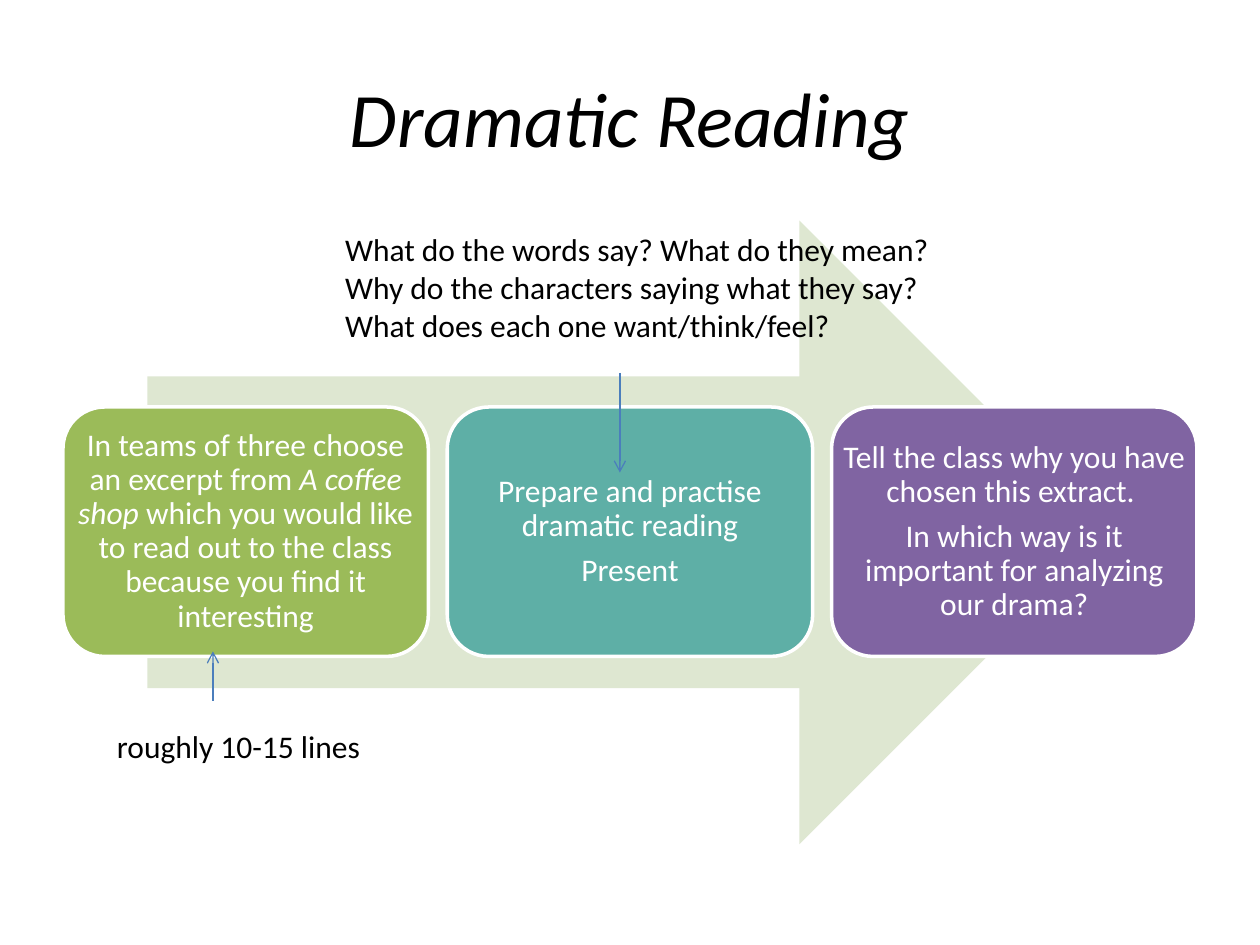
from dataclasses import dataclass

from lxml import etree
from pptx import Presentation
from pptx import util as u
from pptx.dml.color import RGBColor
from pptx.enum import shapes as sh
from pptx.enum import text as tx
from pptx.oxml.ns import qn

HUES = {
    "ink": "000000",
    "white": "FFFFFF",
    "arrow": "DEE7D1",
    "green": "9BBB59",
    "teal": "5EAFA6",
    "purple": "8064A2",
    "line": "4B7EBC",
}


@dataclass(frozen=True)
class Box:
    left: float
    top: float
    width: float
    height: float

    def emu(self) -> list:
        return [u.Inches(v) for v in (self.left, self.top, self.width, self.height)]


@dataclass(frozen=True)
class Style:
    size: int = 18
    hue: str = "ink"
    align: tx.PP_ALIGN = tx.PP_ALIGN.LEFT
    anchor: tx.MSO_ANCHOR = tx.MSO_ANCHOR.TOP
    inset: float | None = None
    lead: float = 1.0
    after: float = 0
    wrap: bool = True


@dataclass(frozen=True)
class Step:
    hue: str
    paras: tuple


@dataclass(frozen=True)
class Pointer:
    x: float
    start: float
    end: float


MID = {"align": tx.PP_ALIGN.CENTER, "anchor": tx.MSO_ANCHOR.MIDDLE}
TITLE = Style(size=44, **MID)
CARD = Style(hue="white", inset=0.07, lead=0.9, after=6.3, **MID)

# Every second piece of a paragraph is italic.
STEPS = (
    Step("green", ((
        "In teams of three choose an excerpt from ",
        "A coffee shop",
        " which you would like to read out to the class because you find it interesting",
    ),)),
    Step("teal", (("Prepare and practise dramatic reading",), ("Present",))),
    Step("purple", (
        ("Tell the class why you have chosen this extract. ",),
        ("In which way is it important for analyzing our drama?",),
    )),
)
ASKS = (
    "What do the words say? What do they mean?\v"
    "Why do the characters saying what they say? \v"
    "What does each one want/think/feel?"
)
POINTERS = (Pointer(1.69, 5.56, 5.17), Pointer(4.92, 2.96, 3.75))


def rgb(hue: str) -> RGBColor:
    return RGBColor.from_string(HUES[hue])


def add_text(slide, box: Box, paras: tuple, style: Style) -> None:
    """Write paragraphs whose pieces alternate between upright and italic."""
    frame = slide.shapes.add_textbox(*box.emu()).text_frame
    frame.word_wrap = style.wrap
    frame.vertical_anchor = style.anchor
    if style.inset is not None:
        gap = u.Inches(style.inset)
        frame.margin_left = frame.margin_right = gap
        frame.margin_top = frame.margin_bottom = gap
    frame.text = "\n".join("".join(bits) for bits in paras)
    for para, bits in zip(frame.paragraphs, paras):
        para.alignment = style.align
        para.line_spacing = style.lead
        para.space_after = u.Pt(style.after)
        if len(bits) > 1:
            para.clear()
            for bit in filter(None, bits):
                para.add_run().text = bit
        slant = [i % 2 == 1 for i, bit in enumerate(bits) if bit]
        for i, run in enumerate(para.runs):
            font = run.font
            font.name = "Calibri"
            font.size = u.Pt(style.size)
            font.color.rgb = rgb(style.hue)
            font.italic = slant[i] if len(bits) > 1 else False


def add_shape(slide, kind: sh.MSO_SHAPE, box: Box, hue: str, edge: bool) -> None:
    shape = slide.shapes.add_shape(kind, *box.emu())
    shape.shadow.inherit = False
    shape.fill.solid()
    shape.fill.fore_color.rgb = rgb(hue)
    if edge:
        shape.line.color.rgb = rgb("white")
        shape.line.width = u.Pt(2)
    else:
        shape.line.fill.background()


def add_step(slide, box: Box, step: Step) -> None:
    add_shape(slide, sh.MSO_SHAPE.ROUNDED_RECTANGLE, box, step.hue, True)
    add_text(slide, box, step.paras, CARD)


def add_pointer(slide, ptr: Pointer) -> None:
    x = u.Inches(ptr.x)
    wire = slide.shapes.add_connector(
        sh.MSO_CONNECTOR.STRAIGHT, x, u.Inches(ptr.start), x, u.Inches(ptr.end)
    )
    wire.line.color.rgb = rgb("line")
    wire.line.width = u.Pt(0.75)
    props = wire.line._get_or_add_ln()
    etree.SubElement(props, qn("a:tailEnd"), type="arrow")
    etree.SubElement(wire._element.spPr, qn("a:effectLst"))


def main() -> None:
    deck = Presentation()
    deck.slide_width, deck.slide_height = u.Inches(10), u.Inches(7.5)
    slide = deck.slides.add_slide(deck.slide_layouts[6])

    add_text(slide, Box(0.5, 0.3, 9, 1.25), (("", "Dramatic Reading"),), TITLE)
    add_shape(slide, sh.MSO_SHAPE.RIGHT_ARROW, Box(1.17, 1.75, 7.65, 4.95), "arrow", False)

    width, gap = 2.9, 0.15
    for i, step in enumerate(STEPS):
        add_step(slide, Box(0.5 + i * (width + gap), 3.23, width, 1.98), step)

    add_text(slide, Box(0.83, 5.72, 2.15, 0.4), (("roughly 10-15 lines",),), Style(wrap=False))
    add_text(slide, Box(2.64, 1.78, 5.51, 1.01), ((ASKS,),), Style())
    for ptr in POINTERS:
        add_pointer(slide, ptr)

    deck.save("out.pptx")


if __name__ == "__main__":
    main()
